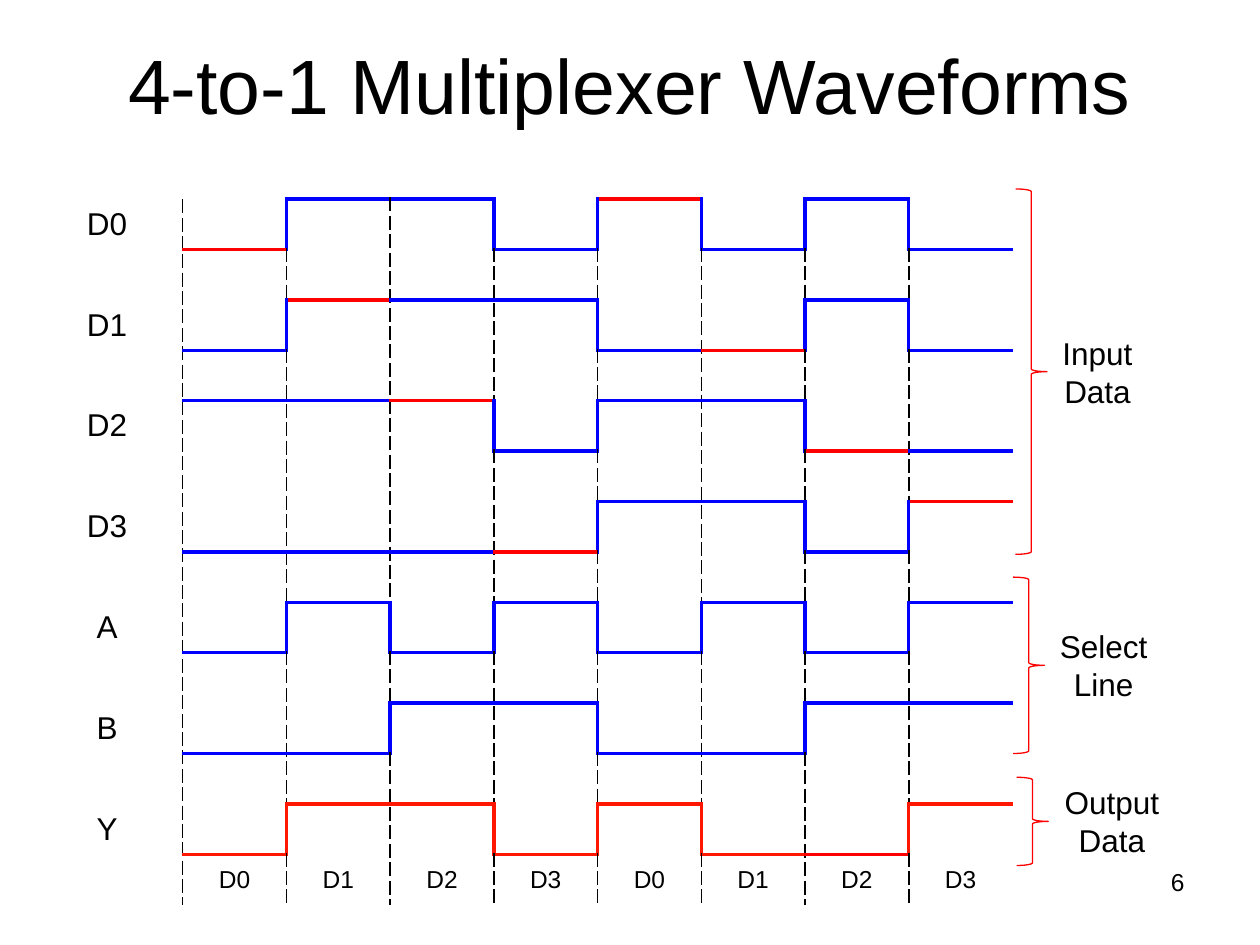
from dataclasses import dataclass
from lxml import etree
from pptx import Presentation
from pptx.dml.color import RGBColor
from pptx.enum.shapes import MSO_SHAPE
from pptx.enum.text import MSO_ANCHOR, MSO_AUTO_SIZE, PP_ALIGN
from pptx.oxml.ns import qn
from pptx.util import Pt

BRACE = MSO_SHAPE.RIGHT_BRACE
MIDDLE, TOP = MSO_ANCHOR.MIDDLE, MSO_ANCHOR.TOP
FIT_SHAPE, FIT_NONE = MSO_AUTO_SIZE.SHAPE_TO_FIT_TEXT, MSO_AUTO_SIZE.NONE
CENTER, RIGHT = PP_ALIGN.CENTER, PP_ALIGN.RIGHT
PLAIN_TABLE = "{2D5ABB26-0587-4C30-8999-92F81FD0307C}"


@dataclass(frozen=True)
class Theme:
    font: str = "Arial"
    text: str = "000000"
    background: str = "FFFFFF"
    signal: str = "0000FF"
    selected: str = "FF0000"
    output: str = "FF1701"
    title_size: float = 44
    label_size: float = 18
    small_size: float = 14
    signal_width: float = 2.25
    grid_width: float = 1
    brace_width: float = 0.75


THEME = Theme()
SIGNALS = [
    ("D0", "01101010", THEME.signal, (0, 4)),
    ("D1", "01110010", THEME.signal, (1, 5)),
    ("D2", "11101100", THEME.signal, (2, 6)),
    ("D3", "00001101", THEME.signal, (3, 7)),
    ("A", "01010101", THEME.signal, ()),
    ("B", "00110011", THEME.signal, ()),
    ("Y", "01101001", THEME.output, (6,)),
]
STEPS = 8
ROWS = 2 * len(SIGNALS)
BRACES = [
    ((580.3, 108, 18, 208.8), (599.8, 187.2, 54.7, 51), ["Input", "Data"]),
    ((578.9, 329.8, 18, 100.8), (598.3, 355, 64.8, 51), ["Select", "Line"]),
    ((581, 444.2, 18, 50.4), (601.2, 444.2, 68.4, 50.4), ["Output", "Data"]),
]


def write_text(frame, lines, size=THEME.label_size, align=CENTER, anchor=TOP):
    frame.vertical_anchor = anchor
    for index, line in enumerate(lines):
        paragraph = frame.add_paragraph() if index else frame.paragraphs[0]
        paragraph.alignment = align
        run = paragraph.add_run()
        run.text = line
        run.font.name = THEME.font
        run.font.size = Pt(size)
        run.font.color.rgb = RGBColor.from_string(THEME.text)


def waveform_borders():
    dashed = (THEME.text, THEME.grid_width, "dash")
    horizontal = {}
    vertical = {(row, column): dashed for row in range(ROWS) for column in range(1, STEPS + 1)}
    for index, (_, levels, color, selected) in enumerate(SIGNALS):
        row = 2 * index
        for step, level in enumerate(levels):
            line_color = THEME.selected if step in selected else color
            edge = row if level == "1" else row + 1
            horizontal[edge, step + 1] = (line_color, THEME.signal_width, "solid")
            if step and level != levels[step - 1]:
                vertical[row, step + 1] = (color, THEME.signal_width, "solid")
    return horizontal, vertical


def waveform_labels():
    labels = {(2 * index, 0): (signal[0], THEME.label_size) for index, signal in enumerate(SIGNALS)}
    for step in range(STEPS):
        labels[ROWS - 1, step + 1] = (f"D{step % 4}", THEME.small_size)
    return labels


class SlideBuilder:
    def __init__(self, slide, theme):
        self.slide = slide
        self.theme = theme

    def title(self, text, box):
        shape = self.slide.shapes.title
        shape.left, shape.top, shape.width, shape.height = map(Pt, box)
        write_text(shape.text_frame, [text], size=self.theme.title_size, anchor=MIDDLE)

    def text(self, lines, box, shapes=None, wrap=False, **text_format):
        shapes = shapes or self.slide.shapes
        frame = shapes.add_textbox(*map(Pt, box)).text_frame
        frame.word_wrap = wrap
        frame.auto_size = FIT_NONE if wrap else FIT_SHAPE
        write_text(frame, lines, **text_format)

    def labelled_brace(self, brace_box, label_box, lines):
        shapes = self.slide.shapes.add_group_shape().shapes
        brace = shapes.add_shape(BRACE, *map(Pt, brace_box))
        brace.shadow.inherit = False
        brace.fill.background()
        brace.line.color.rgb = RGBColor.from_string(self.theme.selected)
        brace.line.width = Pt(self.theme.brace_width)
        self.text(lines, label_box, shapes)

    def border(self, cell, side, line):
        properties = cell._tc.get_or_add_tcPr()
        element = etree.SubElement(properties, qn(f"a:ln{side}"))
        if line is None:
            etree.SubElement(element, qn("a:noFill"))
            return
        color, width, dash = line
        element.set("w", str(Pt(width)))
        fill = etree.SubElement(element, qn("a:solidFill"))
        etree.SubElement(fill, qn("a:srgbClr"), val=color)
        etree.SubElement(element, qn("a:prstDash"), val=dash)

    def waveforms(self, left, top, label_width, step_width, row_height):
        table = self.slide.shapes.add_table(
            ROWS, STEPS + 1, Pt(left), Pt(top),
            Pt(label_width + STEPS * step_width), Pt(row_height * ROWS),
        ).table
        table.first_row = table.horz_banding = False
        table._tbl.tblPr.find(qn("a:tableStyleId")).text = PLAIN_TABLE
        for column, table_column in enumerate(table.columns):
            table_column.width = Pt(step_width if column else label_width)
        for row in table.rows:
            row.height = Pt(row_height)
        horizontal, vertical = waveform_borders()
        labels = waveform_labels()
        for row in range(ROWS):
            for column in range(STEPS + 1):
                cell = table.cell(row, column)
                self.border(cell, "L", vertical.get((row, column)))
                self.border(cell, "R", vertical.get((row, column + 1)))
                self.border(cell, "T", horizontal.get((row, column)))
                self.border(cell, "B", horizontal.get((row + 1, column)))
                cell.fill.solid()
                cell.fill.fore_color.rgb = RGBColor.from_string(self.theme.background)
                cell.vertical_anchor = MIDDLE
                if (row, column) in labels:
                    label, size = labels[row, column]
                    write_text(cell.text_frame, [label], size=size, anchor=MIDDLE)
                else:
                    cell.margin_top = cell.margin_bottom = Pt(0)


def main():
    presentation = Presentation()
    presentation.slide_width, presentation.slide_height = Pt(720), Pt(540)
    slide = presentation.slides.add_slide(presentation.slide_layouts[5])
    builder = SlideBuilder(slide, THEME)
    builder.title("4-to-1 Multiplexer Waveforms", (0, 0, 720, 96))
    builder.text(["6"], (516, 492, 168, 37.5), wrap=True, size=THEME.small_size, align=RIGHT)
    builder.waveforms(left=18, top=113.8, label_width=86.4, step_width=59.3, row_height=28.8)
    for brace_box, label_box, lines in BRACES:
        builder.labelled_brace(brace_box, label_box, lines)
    presentation.save("out.pptx")


if __name__ == "__main__":
    main()
